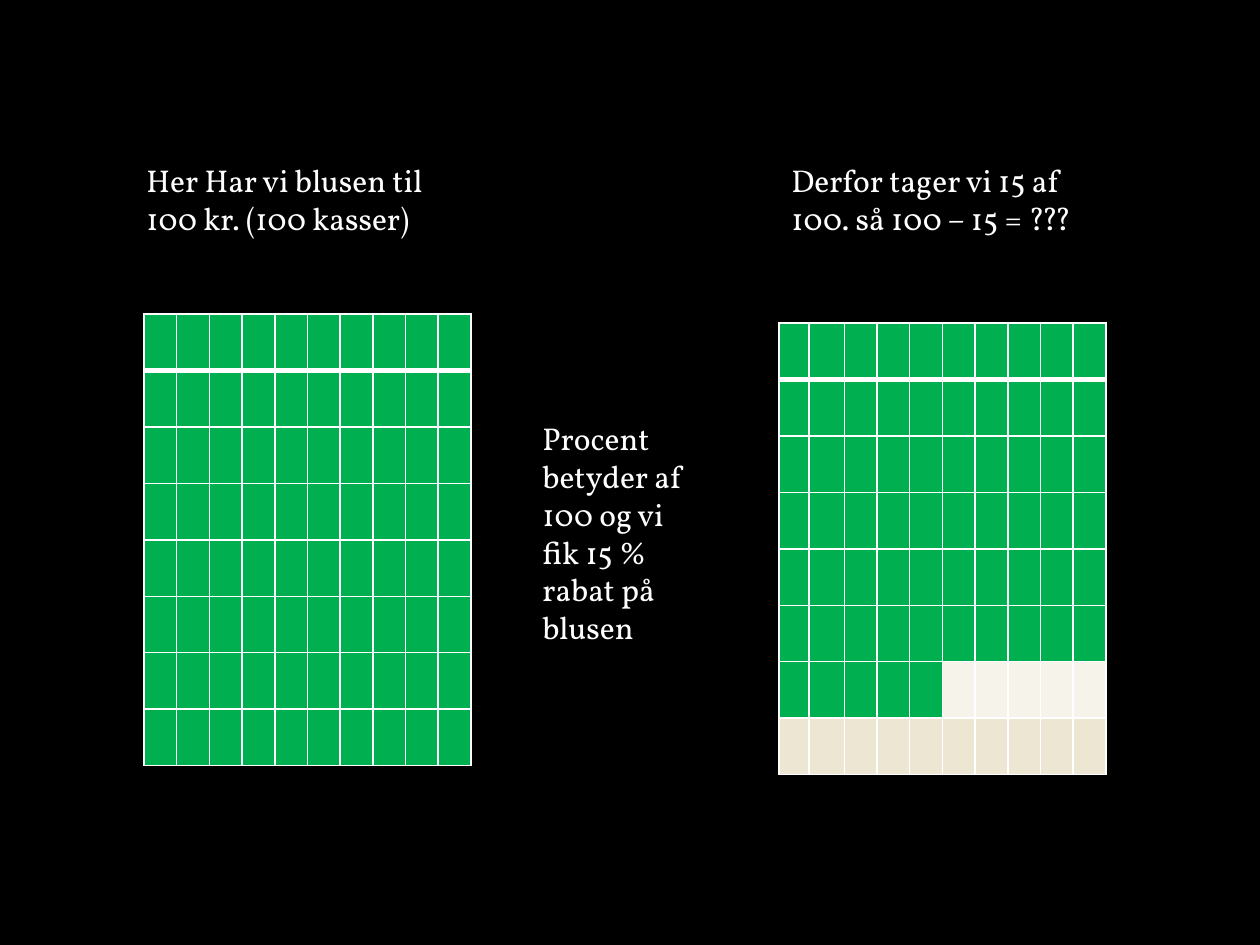
from lxml.etree import SubElement
from pptx import Presentation
from pptx.dml.color import RGBColor
from pptx.enum.text import MSO_AUTO_SIZE
from pptx.oxml.ns import qn
from pptx.util import Pt

PX = 914400 / 126
COLORS = {"black": "000000", "white": "FFFFFF", "green": "00B050",
          "pale": "F6F3EA", "sand": "EDE6D3"}
TEXT_FORMAT = {"name": "Vollkorn", "size": Pt(18)}
FRAME_FORMAT = {"word_wrap": True, "auto_size": MSO_AUTO_SIZE.SHAPE_TO_FIT_TEXT}
CELL_FORMAT = {"margin_top": 0, "margin_bottom": 0}
ROWS, COLS = 8, 10


def emu(*lengths):
    return [round(v * PX) for v in lengths]


def rgb(name):
    return RGBColor.from_string(COLORS[name])


def set_all(obj, values):
    for key, value in values.items():
        setattr(obj, key, value)


def add_borders(cell, widths):
    tc_pr = cell._tc.get_or_add_tcPr()
    for side, width in widths.items():
        ln = SubElement(tc_pr, qn(f"a:ln{side}"), w=str(Pt(width)))
        fill = SubElement(ln, qn("a:solidFill"))
        SubElement(fill, qn("a:srgbClr"), val=COLORS["white"])


def add_box_grid(s, box, weights, color_at):
    shape = s.shapes.add_table(ROWS, COLS, *emu(*box))
    table = shape.table
    set_all(table, {"first_row": False, "horz_banding": False})
    for col, weight in zip(table.columns, weights):
        col.width, = emu(box[2] * weight / sum(weights))
    for r, row in enumerate(table.rows):
        row.height, = emu(box[3] / ROWS)
        for c, cell in enumerate(row.cells):
            add_borders(cell, {"L": 1, "R": 1, "T": 3 if r == 1 else 1,
                               "B": 3 if r == 0 else 1})
            set_all(cell, CELL_FORMAT)
            cell.fill.solid()
            cell.fill.fore_color.rgb = rgb(color_at(r, c))


def add_note(s, box, text):
    tf = s.shapes.add_textbox(*emu(*box)).text_frame
    set_all(tf, FRAME_FORMAT)
    r = tf.paragraphs[0].add_run()
    r.text = text
    set_all(r.font, TEXT_FORMAT)
    r.font.color.rgb = rgb("white")


def full_price(row, col):
    return "green"


def discounted(row, col):
    if row == ROWS - 1:
        return "sand"
    return "pale" if row == ROWS - 2 and col >= COLS // 2 else "green"


def main():
    prs = Presentation()
    prs.slide_width, prs.slide_height = emu(1260, 945)
    s = prs.slides.add_slide(prs.slide_layouts[6])
    s.background.fill.solid()
    s.background.fill.fore_color.rgb = rgb("black")
    add_box_grid(s, (144, 314, 327, 452), [1] * COLS, full_price)
    add_box_grid(s, (779, 323, 327, 452), [24, 28] + [26] * (COLS - 2), discounted)
    add_note(s, (134, 155, 357, 89), "Her Har vi blusen til 100 kr. (100 kasser)")
    add_note(s, (530, 413, 189, 242),
             "Procent betyder af 100 og vi fik 15 % rabat på blusen")
    add_note(s, (779, 155, 328, 89), "Derfor tager vi 15 af 100. så 100 – 15 = ???")
    prs.save("out.pptx")


if __name__ == "__main__":
    main()
